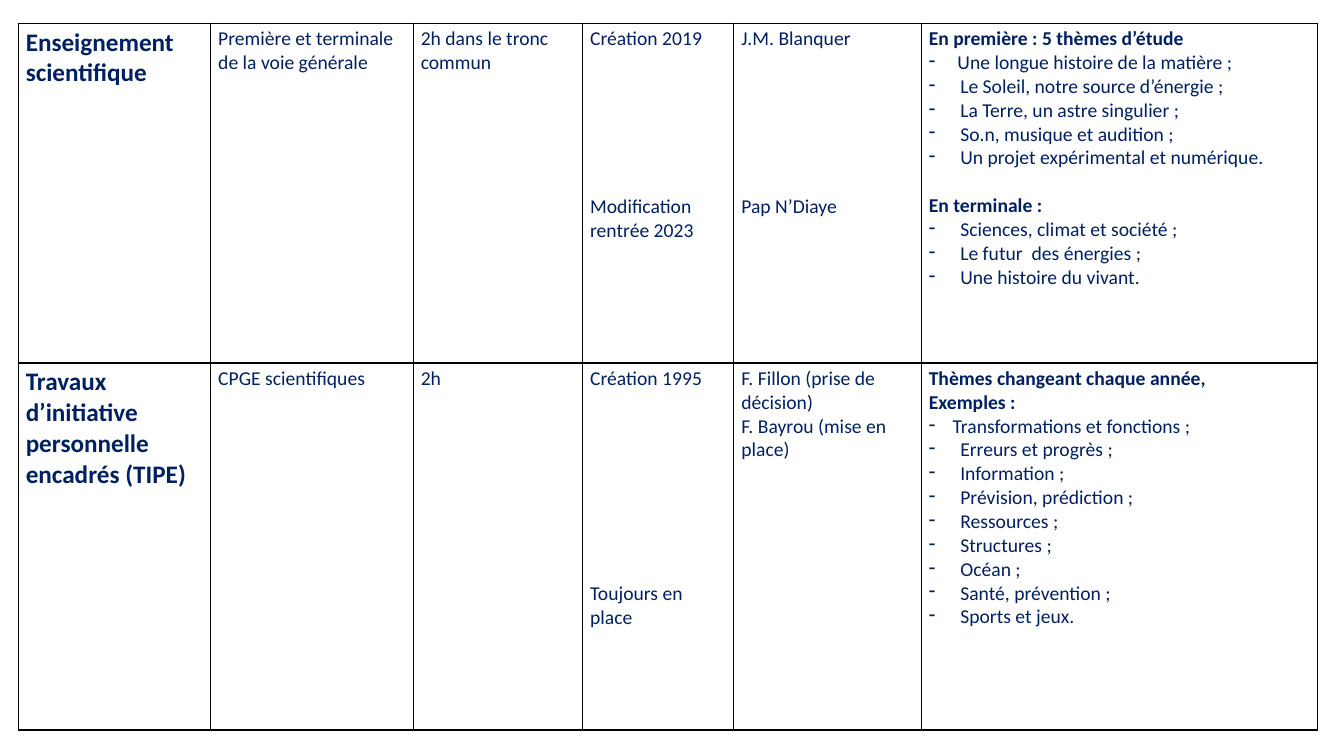
"""Build a slide with a table of two scientific teaching programmes."""
from dataclasses import dataclass

from lxml.etree import SubElement
from pptx import Presentation
from pptx.dml.color import RGBColor
from pptx.oxml.ns import qn
from pptx.util import Pt

NAVY = "002060"
BLACK = "000000"
FONT = "Calibri"
LINE_PITCH = 17.1
COLUMN_WIDTHS = (137.5, 144.7, 121, 108, 133.9, 283)
ROW_HEIGHTS = (242.7, 262.1)


@dataclass(frozen=True)
class Line:
    """One paragraph, with the gap above it counted in lines."""

    text: str
    size: float = 14
    bold: bool = False
    indent: float = 0
    gap: int = 0


def subject(text: str) -> list[Line]:
    """Return the heading of a row."""
    return [Line(text, size=18, bold=True)]


def themes(first_indent: float, *names: str) -> list[Line]:
    """Return dashed themes, the first with its own indent."""
    return [Line(name, indent=22.5 if i else first_indent) for i, name in enumerate(names)]


ROWS = (
    (
        subject("Enseignement scientifique"),
        [Line("Première et terminale de la voie générale")],
        [Line("2h dans le tronc commun")],
        [Line("Création 2019"), Line("Modification rentrée 2023", gap=6)],
        [Line("J.M. Blanquer"), Line("Pap N’Diaye", gap=6)],
        [
            Line("En première : 5 thèmes d’étude", bold=True),
            *themes(
                20.5,
                "Une longue histoire de la matière ;",
                "Le Soleil, notre source d’énergie ;",
                "La Terre, un astre singulier ;",
                "So.n, musique et audition ;",
                "Un projet expérimental et numérique.",
            ),
            Line("En terminale :", bold=True, gap=1),
            *themes(
                22.5,
                "Sciences, climat et société ;",
                "Le futur  des énergies ;",
                "Une histoire du vivant.",
            ),
        ],
    ),
    (
        subject("Travaux d’initiative personnelle encadrés (TIPE)"),
        [Line("CPGE scientifiques")],
        [Line("2h")],
        [Line("Création 1995"), Line("Toujours en place", gap=8)],
        [Line("F. Fillon (prise de décision)"), Line("F. Bayrou (mise en place)")],
        [
            Line("Thèmes changeant chaque année,", bold=True),
            Line("Exemples :", bold=True),
            *themes(
                17,
                "Transformations et fonctions ;",
                "Erreurs et progrès ;",
                "Information ;",
                "Prévision, prédiction ;",
                "Ressources ;",
                "Structures ;",
                "Océan ;",
                "Santé, prévention ;",
                "Sports et jeux.",
            ),
        ],
    ),
)


def colour(value: str) -> RGBColor:
    """Turn a hex string into a colour."""
    return RGBColor.from_string(value)


def add_dash(paragraph, indent: float) -> None:
    """Give a paragraph a hanging dash bullet."""
    properties = paragraph._p.get_or_add_pPr()
    properties.set("marL", str(Pt(indent)))
    properties.set("indent", str(-Pt(indent)))
    SubElement(properties, qn("a:buFontTx"))
    SubElement(properties, qn("a:buChar"), char="-")


def write_line(paragraph, line: Line) -> None:
    """Write one line of a cell."""
    if line.indent:
        add_dash(paragraph, line.indent)
    if line.gap:
        paragraph.space_before = Pt(line.gap * LINE_PITCH)
    paragraph.text = line.text
    font = paragraph.font
    font.name = FONT
    font.size = Pt(line.size)
    font.bold = line.bold
    font.color.rgb = colour(NAVY)


def add_borders(cell) -> None:
    """Draw a thin black line on each side of a cell."""
    properties = cell._tc.get_or_add_tcPr()
    for side in ("lnL", "lnR", "lnT", "lnB"):
        border = SubElement(properties, qn(f"a:{side}"), w=str(Pt(1)))
        fill = SubElement(border, qn("a:solidFill"))
        SubElement(fill, qn("a:srgbClr"), val=BLACK)


def fill_cell(cell, lines: list[Line]) -> None:
    """Format a cell and write its lines."""
    cell.margin_left = cell.margin_right = Pt(5.4)
    cell.margin_top = cell.margin_bottom = Pt(2.7)
    add_borders(cell)
    cell.fill.background()
    frame = cell.text_frame
    for i, line in enumerate(lines):
        write_line(frame.add_paragraph() if i else frame.paragraphs[0], line)


def add_programmes(slide) -> None:
    """Add the table of programmes."""
    table = slide.shapes.add_table(
        len(ROWS), len(COLUMN_WIDTHS), Pt(13), Pt(16.6),
        Pt(sum(COLUMN_WIDTHS)), Pt(sum(ROW_HEIGHTS)),
    ).table
    table.first_row = table.horz_banding = False
    for column, width in zip(table.columns, COLUMN_WIDTHS):
        column.width = Pt(width)
    for row, height, contents in zip(table.rows, ROW_HEIGHTS, ROWS):
        row.height = Pt(height)
        for cell, lines in zip(row.cells, contents):
            fill_cell(cell, lines)


def main() -> None:
    """Build and save the presentation."""
    presentation = Presentation()
    presentation.slide_width, presentation.slide_height = Pt(960), Pt(540)
    add_programmes(presentation.slides.add_slide(presentation.slide_layouts[6]))
    presentation.save("out.pptx")


if __name__ == "__main__":
    main()
